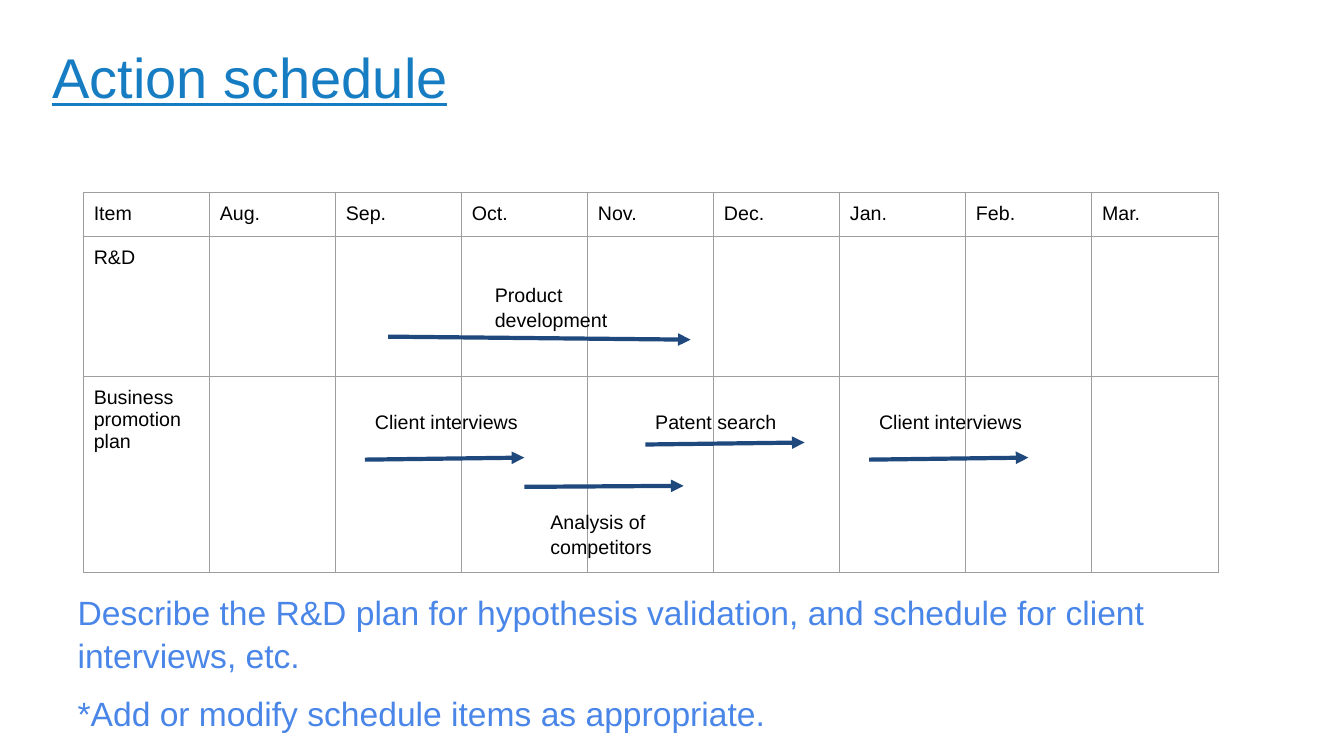
from lxml import etree
from pptx import Presentation
from pptx.dml.color import RGBColor
from pptx.enum.shapes import MSO_CONNECTOR
from pptx.oxml import parse_xml
from pptx.oxml.ns import nsdecls, qn
from pptx.util import Inches, Pt

STRAIGHT = MSO_CONNECTOR.STRAIGHT
BLACK = RGBColor(0x00, 0x00, 0x00)
TITLE_BLUE = RGBColor(0x17, 0x7D, 0xC3)
NOTE_BLUE = RGBColor(0x4A, 0x86, 0xE8)
ARROW_BLUE = RGBColor(0x1F, 0x49, 0x7D)
GRID_GRAY = RGBColor(0x9E, 0x9E, 0x9E)

FONT_NAME = "Arial"
CELL_MARGIN = 0.1
COLUMN_WIDTH = 1.25
ROW_HEIGHTS = [0.42, 1.39, 1.95]
HEADERS = ["Item", "Aug.", "Sep.", "Oct.", "Nov.", "Dec.", "Jan.", "Feb.", "Mar."]
ITEMS = ["R&D", "Business promotion plan"]
NOTES = [
    "Describe the R&D plan for hypothesis validation, and schedule for client interviews, etc.",
    "*Add or modify schedule items as appropriate.",
]
ACTIVITIES = [
    ("Product development", (4.81, 2.69, 1.9, 0.67), (3.85, 3.34, 6.85, 3.37)),
    ("Client interviews", (3.62, 3.95, 2.14, 0.44), (3.62, 4.56, 5.2, 4.54)),
    ("Analysis of competitors", (5.36, 4.94, 1.49, 0.67), (5.2, 4.83, 6.78, 4.82)),
    ("Patent search", (6.4, 3.95, 1.58, 0.44), (6.4, 4.41, 7.98, 4.39)),
    ("Client interviews", (8.62, 3.95, 1.95, 0.44), (8.62, 4.56, 10.2, 4.54)),
]


def format_paragraph(paragraph, size, color, underline=None):
    """Apply the slide font to every run of a paragraph."""
    for run in paragraph.runs:
        run.font.name = FONT_NAME
        run.font.size = Pt(size)
        run.font.color.rgb = color
        run.font.underline = underline


def add_text(slide, lines, box, size, color, side=0, top=0, spacing=1, before=0, underline=None):
    """Add a wrapping text box with one paragraph per line."""
    shape = slide.shapes.add_textbox(*map(Inches, box))
    frame = shape.text_frame
    frame.word_wrap = True
    frame.margin_left = frame.margin_right = Inches(side)
    frame.margin_top = frame.margin_bottom = Inches(top)
    frame.text = "\n".join(lines)
    for paragraph in frame.paragraphs:
        paragraph.line_spacing = spacing
        paragraph.space_before = Pt(before)
        format_paragraph(paragraph, size, color, underline)


def add_arrow(slide, ends):
    """Add a thick line with an arrowhead at its end."""
    connector = slide.shapes.add_connector(STRAIGHT, *map(Inches, ends))
    connector.line.color.rgb = ARROW_BLUE
    connector.line.width = Pt(3)
    etree.SubElement(connector.line._get_or_add_ln(), qn("a:tailEnd"), type="triangle")
    etree.SubElement(connector._element.spPr, qn("a:effectLst"))


def format_cell(cell, text):
    """Fill in one cell with thin gray borders and no background."""
    cell.margin_left = cell.margin_right = Inches(CELL_MARGIN)
    cell.margin_top = cell.margin_bottom = Inches(CELL_MARGIN)
    cell.text = text
    format_paragraph(cell.text_frame.paragraphs[0], 14, BLACK)
    properties = cell._tc.get_or_add_tcPr()
    for side in ("lnL", "lnR", "lnT", "lnB"):
        properties.append(parse_xml(
            f'<a:{side} {nsdecls("a")} w="{Pt(0.75)}"><a:solidFill>'
            f'<a:srgbClr val="{GRID_GRAY}"/></a:solidFill></a:{side}>'
        ))
    cell.fill.background()


def add_schedule(slide):
    """Add the table of items by month."""
    rows = [HEADERS] + [[item] + [""] * (len(HEADERS) - 1) for item in ITEMS]
    table = slide.shapes.add_table(
        len(rows), len(HEADERS), Inches(0.83), Inches(1.91),
        Inches(COLUMN_WIDTH * len(HEADERS)), Inches(sum(ROW_HEIGHTS)),
    ).table
    table.first_row = False
    table.horz_banding = False
    for column in table.columns:
        column.width = Inches(COLUMN_WIDTH)
    for row, height, texts in zip(table.rows, ROW_HEIGHTS, rows):
        row.height = Inches(height)
        for cell, text in zip(row.cells, texts):
            format_cell(cell, text)


def main():
    """Build the action schedule slide."""
    presentation = Presentation()
    presentation.slide_width = Inches(13.33)
    presentation.slide_height = Inches(7.5)
    slide = presentation.slides.add_slide(presentation.slide_layouts[6])
    add_text(slide, ["Action schedule"], (0.52, 0.42, 6.2, 0.69), 40, TITLE_BLUE, underline=True)
    add_text(slide, NOTES, (0.77, 5.73, 11.04, 1.7), 24, NOTE_BLUE,
             top=0.11, spacing=1.08, before=10.3)
    add_schedule(slide)
    for label, box, ends in ACTIVITIES:
        add_arrow(slide, ends)
        add_text(slide, [label], box, 14, BLACK, side=0.1, top=0.1, spacing=1.07)
    presentation.save("out.pptx")


if __name__ == "__main__":
    main()
